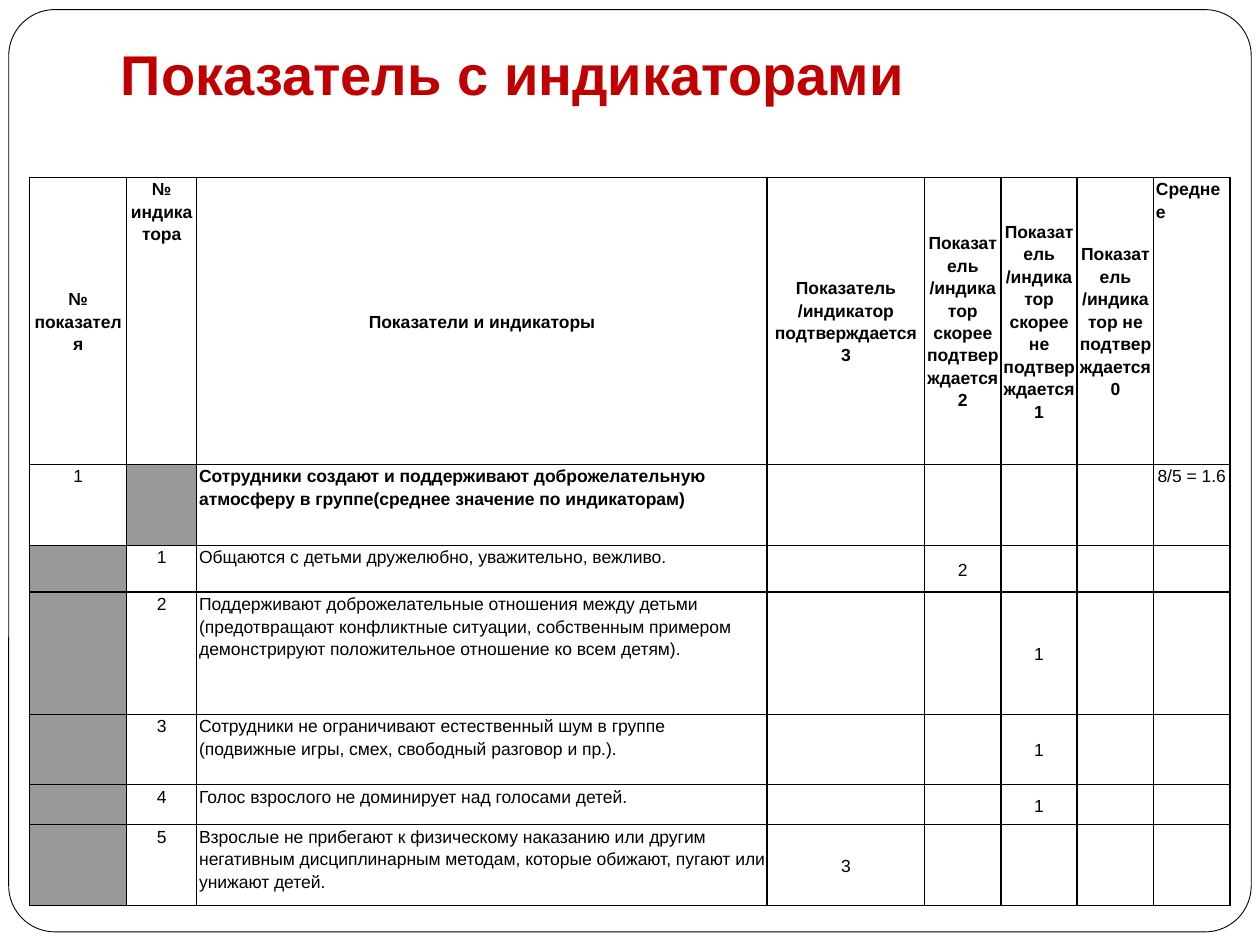
from dataclasses import dataclass
from typing import Optional

from lxml.etree import SubElement
from pptx import Presentation
from pptx.dml.color import RGBColor
from pptx.enum.shapes import MSO_SHAPE
from pptx.enum.text import MSO_ANCHOR, PP_ALIGN
from pptx.oxml.ns import qn
from pptx.util import Pt

FONT = "Arial"
BLACK, WHITE, GRAY, RED = "000000", "FFFFFF", "999999", "C00000"
COLUMNS = [55.5, 40, 326, 90] + [43.6] * 4
ROWS = [164, 46.3, 26.8, 69.8, 40.2, 22.9, 46.2]


@dataclass
class Cell:
    text: str = ""
    bold: bool = False
    centered: bool = True
    middle: bool = False
    fill: str = WHITE


@dataclass
class Indicator:
    text: str
    score: int


HEADERS = [
    Cell("№ показателя", True, middle=True),
    Cell("№\nиндикатора", True),
    Cell("Показатели и индикаторы", True, middle=True),
    Cell("Показатель /индикатор подтверждается\n3", True, middle=True),
    Cell("Показатель /индикатор скорее подтверждается\n2", True, middle=True),
    Cell("Показатель /индикатор скорее не подтверждается\n1", True, middle=True),
    Cell("Показатель /индикатор не подтверждается\n0", True, middle=True),
    Cell("Среднее", True, centered=False),
]
SUMMARY = [
    Cell("1"),
    Cell(fill=GRAY),
    Cell("Сотрудники создают и поддерживают доброжелательную атмосферу в группе"
         "(среднее значение по индикаторам)", True, centered=False),
    *[Cell()] * 4,
    Cell("8/5 = 1.6"),
]
INDICATORS = [
    Indicator("Общаются с детьми дружелюбно, уважительно, вежливо.", 2),
    Indicator("Поддерживают доброжелательные отношения между детьми (предотвращают "
              "конфликтные ситуации, собственным примером демонстрируют "
              "положительное отношение ко всем детям).", 1),
    Indicator("Сотрудники не ограничивают естественный шум в группе (подвижные игры, "
              "смех, свободный разговор и пр.).", 1),
    Indicator("Голос взрослого не доминирует над голосами детей.", 1),
    Indicator("Взрослые не прибегают к физическому наказанию или другим негативным "
              "дисциплинарным методам, которые обижают, пугают или унижают детей.", 3),
]


def color(value: str) -> RGBColor:
    return RGBColor.from_string(value)


def add_run(p, text: str, size: float, bold: bool, hue: str) -> None:
    r = p.add_run()
    r.text = text
    r.font.name, r.font.size, r.font.bold = FONT, Pt(size), bold
    r.font.color.rgb = color(hue)


def indicator_row(number: int, item: Indicator) -> list[Cell]:
    scores = [Cell(str(n), middle=True) if n == item.score else Cell()
              for n in (3, 2, 1, 0)]
    return [Cell(fill=GRAY), Cell(str(number)), Cell(item.text, centered=False),
            *scores, Cell()]


def add_borders(cell) -> None:
    properties = cell._tc.get_or_add_tcPr()
    for side in "LRTB":
        line = SubElement(properties, qn(f"a:ln{side}"), w=str(Pt(1)))
        fill = SubElement(line, qn("a:solidFill"))
        SubElement(fill, qn("a:srgbClr"), val=BLACK)


def fill_cell(cell, data: Cell) -> None:
    add_borders(cell)
    cell.fill.solid()
    cell.fill.fore_color.rgb = color(data.fill)
    cell.margin_left = cell.margin_right = Pt(1.44)
    cell.margin_top = cell.margin_bottom = Pt(0)
    cell.vertical_anchor = MSO_ANCHOR.MIDDLE if data.middle else MSO_ANCHOR.TOP
    if not data.text:
        return
    tf = cell.text_frame
    for i, text in enumerate(data.text.split("\n")):
        p = tf.add_paragraph() if i else tf.paragraphs[0]
        p.alignment = PP_ALIGN.CENTER if data.centered else PP_ALIGN.LEFT
        p.line_spacing = 1.15
        add_run(p, text, 10, data.bold, BLACK)


def add_frame(s) -> None:
    sp = s.shapes.add_shape(MSO_SHAPE.ROUNDED_RECTANGLE,
                            Pt(5), Pt(5.5), Pt(710), Pt(527))
    sp.adjustments[0] = 0.05
    sp.shadow.inherit = False
    sp.fill.solid()
    sp.fill.fore_color.rgb = color(WHITE)
    sp.line.color.rgb = color(BLACK)
    sp.line.width = Pt(0.5)


def add_title(s, text: str) -> None:
    sp = s.shapes.add_textbox(Pt(62), Pt(16.5), Pt(612), Pt(52))
    tf = sp.text_frame
    tf.word_wrap = True
    tf.vertical_anchor = MSO_ANCHOR.BOTTOM
    tf.margin_bottom = Pt(7.2)
    add_run(tf.paragraphs[0], text, 32, True, RED)


def add_scores(s, rows: list[list[Cell]], top: Optional[float] = 101.3) -> None:
    frame = s.shapes.add_table(len(ROWS), len(COLUMNS), Pt(16.9), Pt(top),
                               Pt(sum(COLUMNS)), Pt(sum(ROWS)))
    table = frame.table
    table.first_row = table.horz_banding = False
    for column, width in zip(table.columns, COLUMNS):
        column.width = Pt(width)
    for row, height, cells in zip(table.rows, ROWS, rows):
        row.height = Pt(height)
        for cell, data in zip(row.cells, cells):
            fill_cell(cell, data)


def main() -> None:
    """Build the slide with the indicator score table."""
    prs = Presentation()
    prs.slide_width, prs.slide_height = Pt(720), Pt(540)
    s = prs.slides.add_slide(prs.slide_layouts[6])
    add_frame(s)
    add_title(s, "Показатель с индикаторами")
    details = [indicator_row(n, item) for n, item in enumerate(INDICATORS, 1)]
    add_scores(s, [HEADERS, SUMMARY, *details])
    prs.save("out.pptx")


if __name__ == "__main__":
    main()
